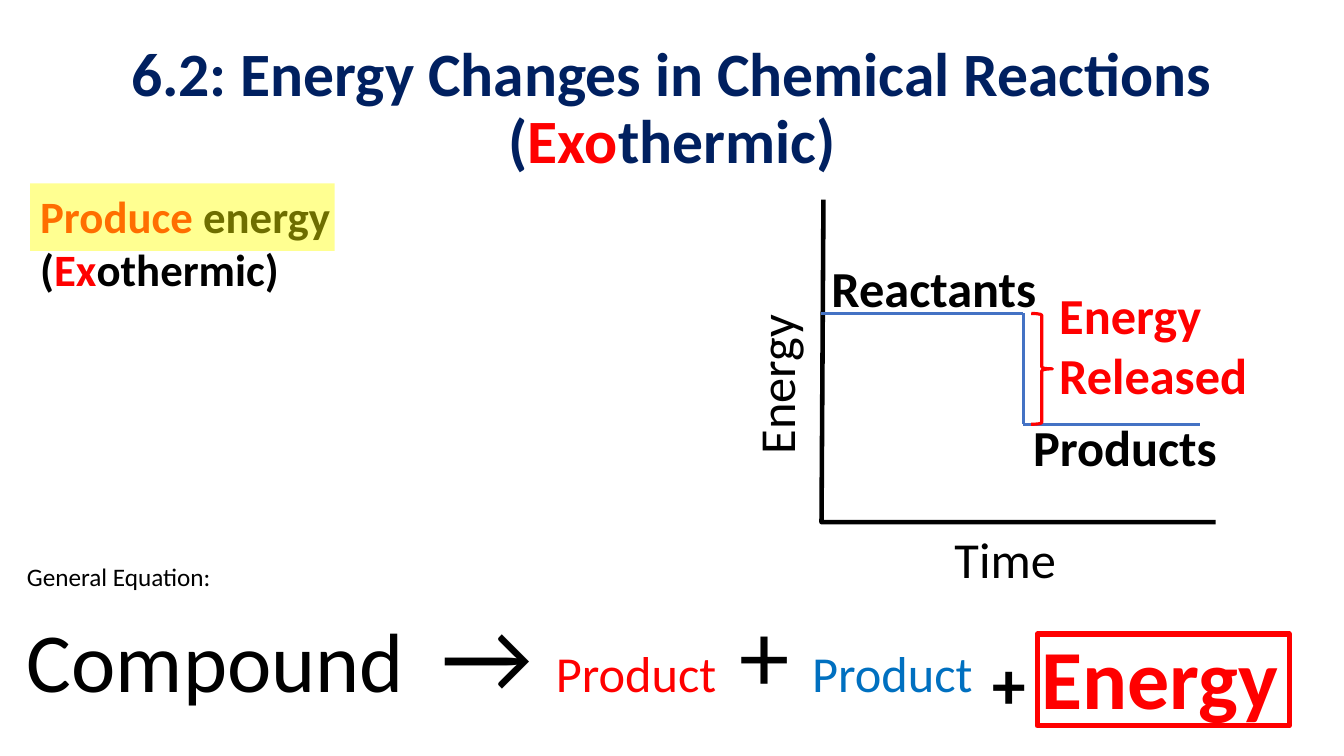
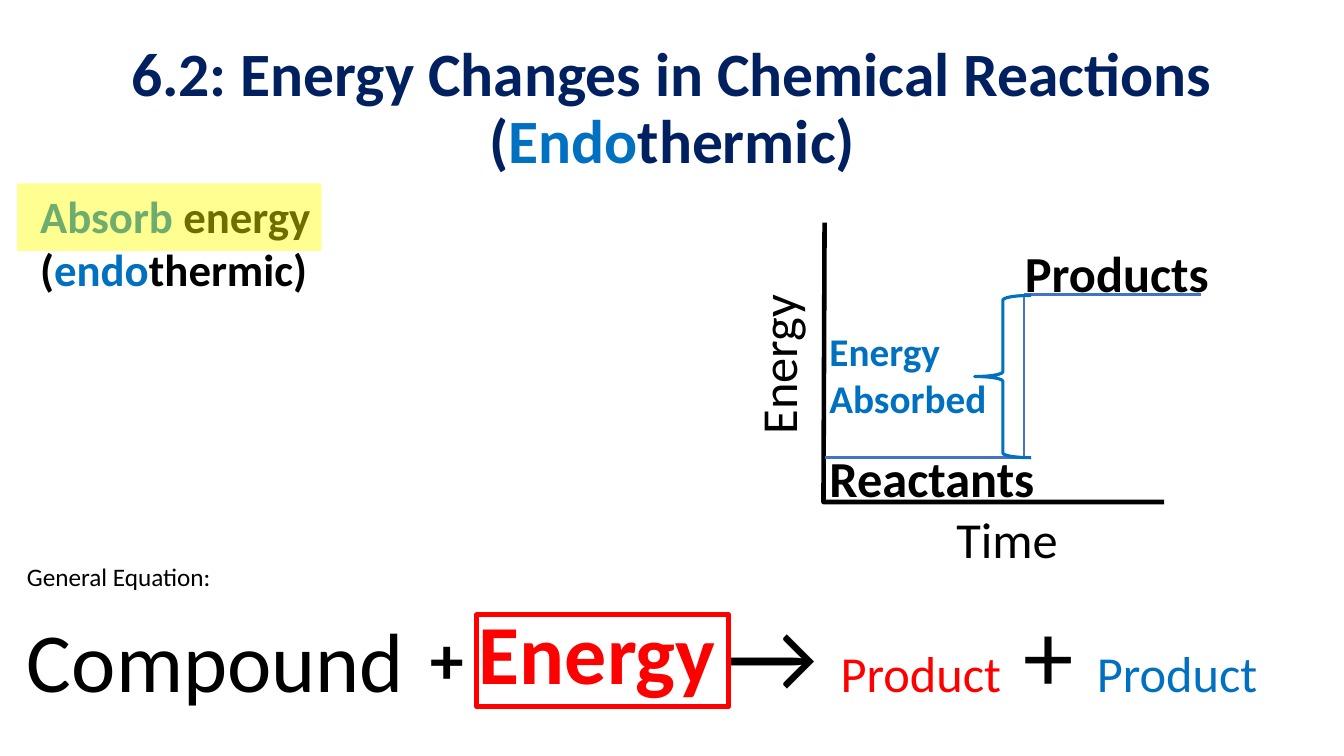
"""Build two slides on exothermic and endothermic reactions."""
import dataclasses
import itertools
import typing

import lxml.etree
import pptx
import pptx.dml.color
import pptx.enum.shapes
import pptx.enum.text
import pptx.oxml.ns
import pptx.util

Pt = pptx.util.Pt
SHAPES = pptx.enum.shapes.MSO_SHAPE
FONT = "Calibri"
NAVY, RED, BLUE, BLACK = "002060", "FF0000", "0070C0", "000000"
YELLOW, STEP_BLUE = "FFFF00", "4472C4"


class Point(typing.NamedTuple):
    x: float
    y: float


class Box(typing.NamedTuple):
    left: float
    top: float
    width: float
    height: float


class Span(typing.NamedTuple):
    text: str
    size: float
    color: str = BLACK
    bold: bool = False


@dataclasses.dataclass(frozen=True)
class Reaction:
    accent: str
    title_prefix: str
    verb: str
    heading_prefix: str
    heading_rest: str
    highlight_left: float
    arrow_tab: float
    equation_width: float
    energy_term: Point
    energy_frame: Point
    axis_top: Point
    origin: Point
    axis_end: float
    step: tuple[Point, ...]
    reactants: Point
    products: Point
    change: str
    change_size: float
    change_box: Box
    brace_kind: pptx.enum.shapes.MSO_SHAPE
    brace_box: Box


REACTIONS = (
    Reaction(
        accent=RED, title_prefix="Exo", verb="Produce",
        heading_prefix="Ex", heading_rest="othermic)",
        highlight_left=21.6, arrow_tab=296.3, equation_width=816.5,
        energy_term=Point(702, 443.5), energy_frame=Point(740.9, 452.9),
        axis_top=Point(588.2, 142.6), origin=Point(586.8, 373), axis_end=868.3,
        step=(Point(586.8, 223.9), Point(730.8, 223.9),
              Point(730.8, 303.1), Point(856.8, 303.1)),
        reactants=Point(586.8, 180), products=Point(730.8, 293.8),
        change="Energy Released", change_size=36,
        change_box=Box(749.5, 199.4, 169.2, 94.3),
        brace_kind=SHAPES.RIGHT_BRACE, brace_box=Box(736.6, 223.9, 15.1, 79.2),
    ),
    Reaction(
        accent=BLUE, title_prefix="Endo", verb="Absorb",
        heading_prefix="endo", heading_rest="thermic)",
        highlight_left=12.2, arrow_tab=499.7, equation_width=927.4,
        energy_term=Point(300.2, 425.5), energy_frame=Point(340.6, 439.2),
        axis_top=Point(589, 159.1), origin=Point(588.2, 358.6), axis_end=831.6,
        step=(Point(589, 326.6), Point(731.5, 326.6),
              Point(731.5, 210.2), Point(858.2, 210.2)),
        reactants=Point(585.4, 316.1), products=Point(725, 169.2),
        change="Energy Absorbed", change_size=28,
        change_box=Box(585.4, 230.4, 169.2, 74.9),
        brace_kind=SHAPES.LEFT_BRACE, brace_box=Box(696.2, 211, 40.3, 115.9),
    ),
)


def rgb(color: str) -> pptx.dml.color.RGBColor:
    """Turn a hex string into a colour."""
    return pptx.dml.color.RGBColor.from_string(color)


def add_element(parent, tag: str, **attributes: str):
    """Append a drawing element to a parent."""
    return lxml.etree.SubElement(parent, pptx.oxml.ns.qn(tag), attributes)


def write(para, *spans: Span) -> None:
    """Fill a paragraph with formatted spans."""
    for index, span in enumerate(spans):
        if index == 0:
            para.text = span.text
            runs = para.runs
        else:
            runs = (para.add_run(),)
            runs[0].text = span.text
        for run in runs:
            run.font.name = FONT
            run.font.size = Pt(span.size)
            run.font.bold = span.bold
            run.font.color.rgb = rgb(span.color)


def add_text(page, box: Box, *spans: Span, rotation: float = 0):
    """Add a wrapping text box and return its text frame."""
    shape = page.shapes.add_textbox(*map(Pt, box))
    shape.rotation = rotation
    frame = shape.text_frame
    frame.word_wrap = True
    frame.auto_size = pptx.enum.text.MSO_AUTO_SIZE.SHAPE_TO_FIT_TEXT
    write(frame.paragraphs[0], *spans)
    return frame


def outline(shape, color: str, width: float) -> None:
    """Leave a shape unfilled and draw its outline."""
    shape.shadow.inherit = False
    shape.fill.background()
    shape.line.color.rgb = rgb(color)
    shape.line.width = Pt(width)


def add_outlined(page, kind, box: Box, color: str, width: float) -> None:
    """Add an unfilled preset shape."""
    outline(page.shapes.add_shape(kind, *map(Pt, box)), color, width)


def add_title(page, reaction: Reaction) -> None:
    """Place and write the slide title."""
    title = page.shapes.title
    title.left, title.top, title.width, title.height = map(Pt, Box(66.2, 26.6, 828, 104.4))
    frame = title.text_frame
    frame.word_wrap = True
    frame.auto_size = pptx.enum.text.MSO_AUTO_SIZE.NONE
    frame.vertical_anchor = pptx.enum.text.MSO_ANCHOR.MIDDLE
    para = frame.paragraphs[0]
    para.alignment = pptx.enum.text.PP_ALIGN.CENTER
    para.line_spacing = 0.9
    write(para,
          Span("6.2: Energy Changes in Chemical Reactions\v(", 44, NAVY, True),
          Span(reaction.title_prefix, 44, reaction.accent, True),
          Span("thermic)", 44, NAVY, True))


def add_heading(page, reaction: Reaction) -> None:
    """Write the summary of the energy change."""
    add_text(page, Box(21.6, 131, 293.8, 85),
             Span(reaction.verb, 32, reaction.accent, True),
             Span(" energy (", 32, BLACK, True),
             Span(reaction.heading_prefix, 32, reaction.accent, True),
             Span(reaction.heading_rest, 32, BLACK, True))


def add_highlight(page, left: float) -> None:
    """Lay a translucent marker over the heading."""
    marker = page.shapes.add_shape(SHAPES.RECTANGLE, *map(Pt, Box(left, 131, 217.4, 48.2)))
    marker.shadow.inherit = False
    marker.line.fill.background()
    marker.fill.solid()
    marker.fill.fore_color.rgb = rgb(YELLOW)
    color = marker.element.spPr.find(".//" + pptx.oxml.ns.qn("a:srgbClr"))
    add_element(color, "a:alpha", val="43000")


def add_equation(page, reaction: Reaction) -> None:
    """Write the general equation and frame its energy term."""
    frame = add_text(page, Box(12.2, 397.4, reaction.equation_width, 116.6),
                     Span("General Equation:", 18))
    para = frame.add_paragraph()
    write(para, Span("Compound\t", 60), Span("→ ", 72), Span("Product", 36, RED),
          Span(" ", 72, BLUE), Span("+ ", 72), Span("Product", 36, BLUE))
    tabs = add_element(para._p.get_or_add_pPr(), "a:tabLst")
    add_element(tabs, "a:tab", pos=str(Pt(reaction.arrow_tab)), algn="l")
    add_text(page, Box(*reaction.energy_term, 236.2, 79.9),
             Span("+ ", 48, BLACK, True), Span("Energy", 60, RED, True))
    add_outlined(page, SHAPES.RECTANGLE, Box(*reaction.energy_frame, 180, 65.5), RED, 3.75)


def add_line(page, start: Point, end: Point) -> None:
    """Draw one segment of the energy step."""
    line = page.shapes.add_connector(
        pptx.enum.shapes.MSO_CONNECTOR.STRAIGHT, *map(Pt, (*start, *end)))
    line.line.color.rgb = rgb(STEP_BLUE)
    line.line.width = Pt(2)
    add_element(line.element.spPr, "a:effectLst")


def add_axes(page, reaction: Reaction) -> None:
    """Draw the axes with their names."""
    origin = reaction.origin
    builder = page.shapes.build_freeform(*map(Pt, reaction.axis_top))
    corners = (origin, Point(reaction.axis_end, origin.y))
    builder.add_line_segments([tuple(map(Pt, corner)) for corner in corners], close=False)
    outline(builder.convert_to_shape(), BLACK, 3.25)
    add_text(page, Box(origin.x - 99, origin.y - 133.2, 132.5, 51.1),
             Span("Energy", 36), rotation=270)
    add_text(page, Box(origin.x + 87.9, origin.y + 0.7, 132.5, 51.1), Span("Time", 36))


def add_diagram(page, reaction: Reaction) -> None:
    """Draw the energy diagram."""
    add_axes(page, reaction)
    for start, end in itertools.pairwise(reaction.step):
        add_line(page, start, end)
    for name, place in (("Reactants", reaction.reactants), ("Products", reaction.products)):
        add_text(page, Box(*place, 169.2, 51.1), Span(name, 36, BLACK, True))
    add_text(page, reaction.change_box,
             Span(reaction.change, reaction.change_size, reaction.accent, True))
    add_outlined(page, reaction.brace_kind, reaction.brace_box, reaction.accent, 2.25)


def main() -> None:
    """Build and save the deck."""
    deck = pptx.Presentation()
    deck.slide_width, deck.slide_height = Pt(960), Pt(540)
    for reaction in REACTIONS:
        page = deck.slides.add_slide(deck.slide_layouts[5])
        add_title(page, reaction)
        add_heading(page, reaction)
        add_equation(page, reaction)
        add_highlight(page, reaction.highlight_left)
        add_diagram(page, reaction)
    deck.save("out.pptx")


if __name__ == "__main__":
    main()
